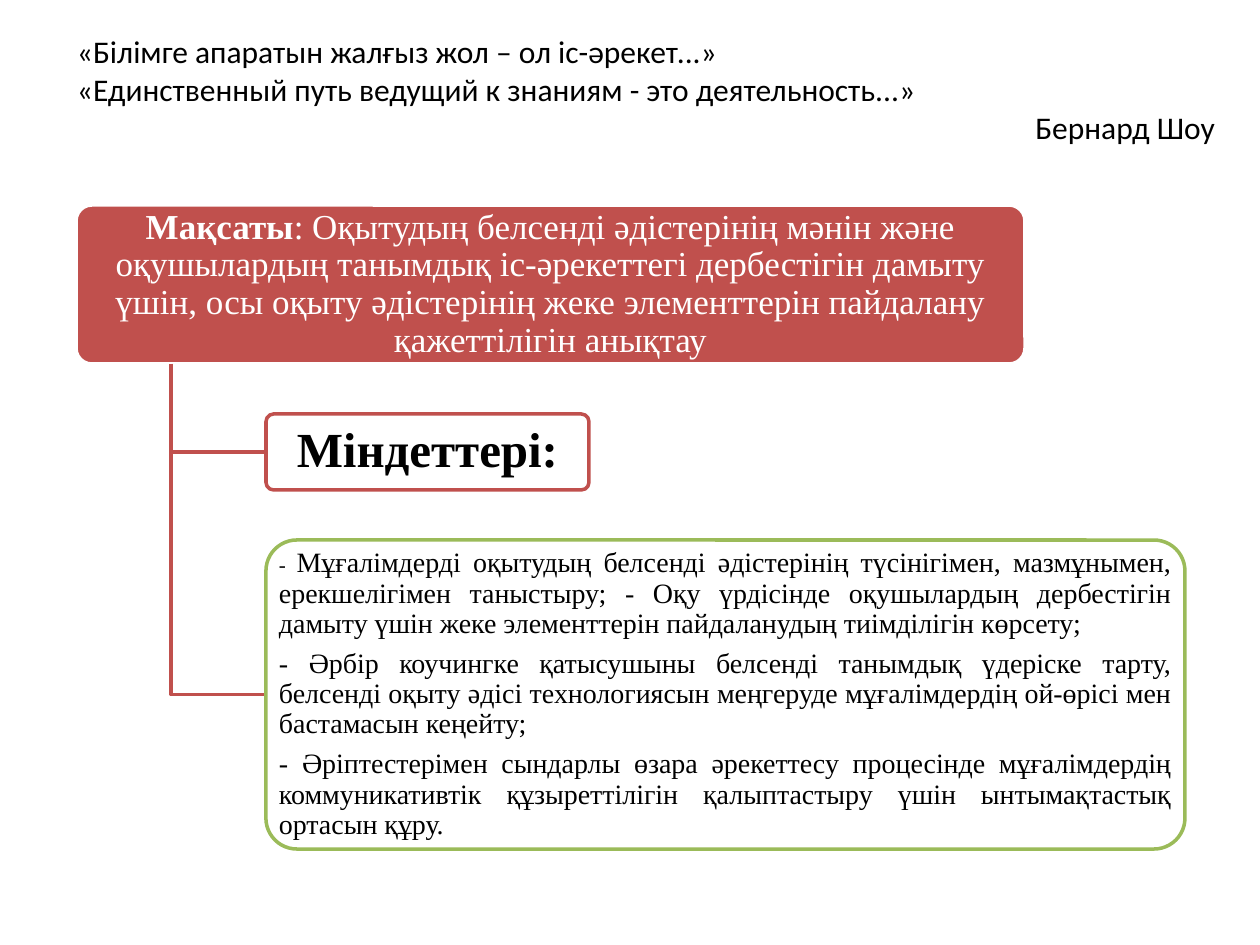
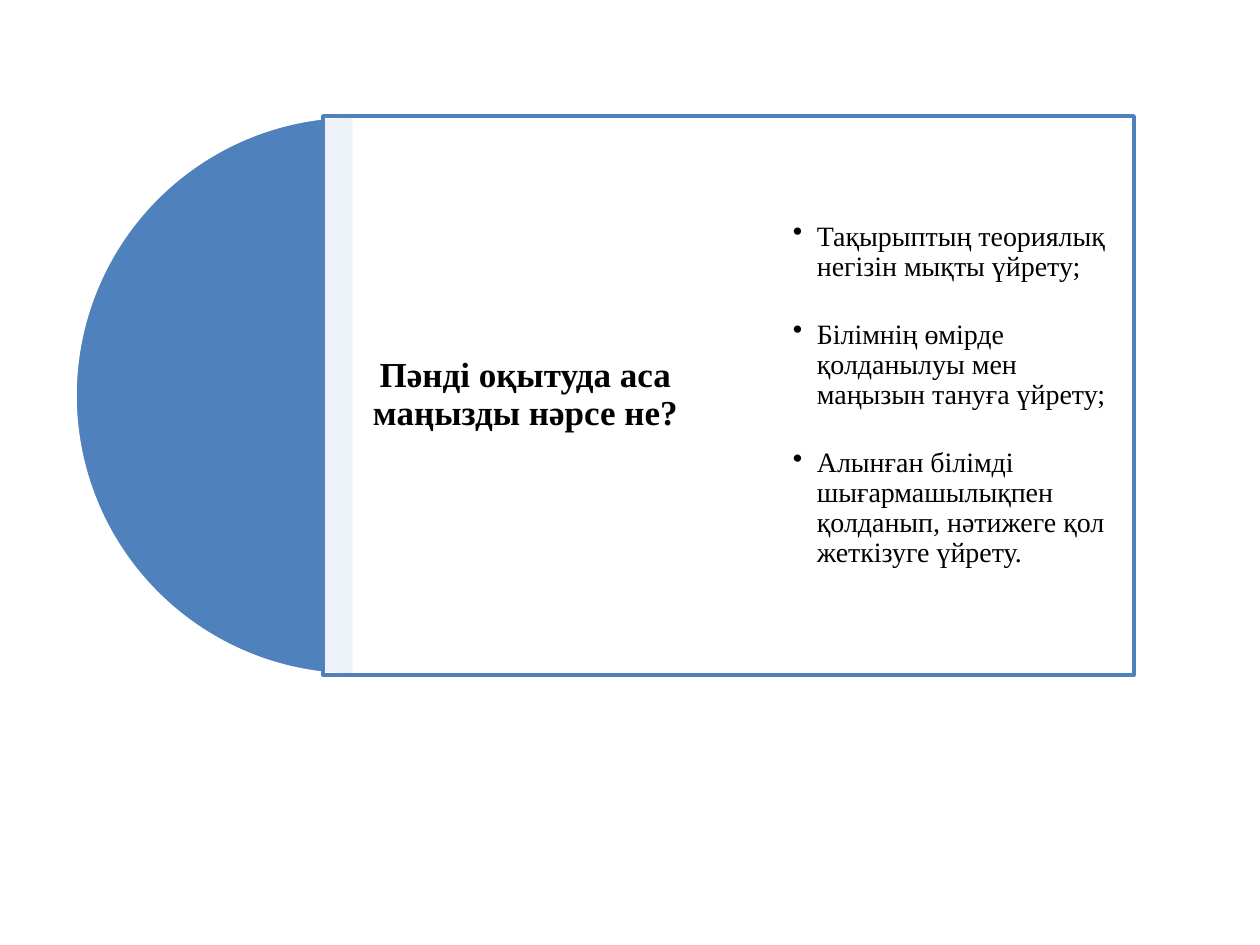
from dataclasses import dataclass

import lxml.etree
import pptx
import pptx.dml.color
import pptx.enum.shapes
import pptx.enum.text
import pptx.oxml.ns
import pptx.util

EMU_PER_PX = 914400 / 126
SHAPE = pptx.enum.shapes.MSO_SHAPE
ALIGN = pptx.enum.text.PP_ALIGN
ANCHOR = pptx.enum.text.MSO_ANCHOR
qn = pptx.oxml.ns.qn


@dataclass(frozen=True)
class Theme:
    red: str = "C0504D"
    green: str = "9BBB59"
    blue: str = "4F81BD"
    white: str = "FFFFFF"
    black: str = "000000"
    serif: str = "Times New Roman"
    sans: str = "Calibri"
    heading: int = 28
    lead: int = 20
    quote: int = 18
    body: int = 16
    dash: int = 12
    line: int = 2
    spacing: float = 0.9
    panel_opacity: int = 90


T = Theme()


def px(n):
    return pptx.util.Emu(round(n * EMU_PER_PX))


def rgb(color):
    return pptx.dml.color.RGBColor.from_string(color)


# Shared shape and text helpers
def paint(sp, fill, line, opacity=100):
    sp.shadow.inherit = False
    if fill:
        sp.fill.solid()
        sp.fill.fore_color.rgb = rgb(fill)
        if opacity < 100:
            clr = sp.fill._xPr.find(qn("a:solidFill"))[0]
            lxml.etree.SubElement(clr, qn("a:alpha"), val=str(opacity * 1000))
    else:
        sp.fill.background()
    sp.line.color.rgb = rgb(line)
    sp.line.width = pptx.util.Pt(T.line)


def add_shape(s, kind, box, fill, line, opacity=100, adj=()):
    sp = s.shapes.add_shape(kind, *map(px, box))
    paint(sp, fill, line, opacity)
    for i, value in enumerate(adj):
        sp.adjustments[i] = value
    return sp


def add_textbox(s, box):
    return s.shapes.add_textbox(*map(px, box))


def setup_frame(sp, insets, anchor=ANCHOR.MIDDLE):
    tf = sp.text_frame
    tf.word_wrap = True
    tf.vertical_anchor = anchor
    tf.margin_left = tf.margin_right = px(insets[0])
    tf.margin_top = tf.margin_bottom = px(insets[1])
    return tf


def add_paragraph(tf, runs, align, gap=0.0, spacing=T.spacing, font=T.serif, color=T.black):
    """Each run is (text, size, bold); gap is the space in points above later paragraphs."""
    first = not tf.paragraphs[0].runs
    p = tf.paragraphs[0] if first else tf.add_paragraph()
    p.alignment = align
    p.line_spacing = spacing
    p.space_before = pptx.util.Pt(0 if first else gap)
    for text, size, bold in runs:
        r = p.add_run()
        r.text = text
        r.font.name = font
        r.font.size = pptx.util.Pt(size)
        r.font.bold = bold
        r.font.color.rgb = rgb(color)
    return p


def add_bullet(p, indent):
    pPr = p._p.get_or_add_pPr()
    pPr.set("marL", str(px(indent)))
    pPr.set("indent", str(-px(indent)))
    lxml.etree.SubElement(pPr, qn("a:buChar"), char="•")


# Slide 1: quotation and goal tree
def add_quote(s, box, lines, author):
    tf = setup_frame(add_textbox(s, box), (13, 6), ANCHOR.TOP)
    for text, align in [(t, ALIGN.LEFT) for t in lines] + [(author, ALIGN.RIGHT)]:
        add_paragraph(tf, [(text, T.quote, False)], align, spacing=1.0, font=T.sans)


def add_branch(s, x, y, bend_x, bend_y):
    fb = s.shapes.build_freeform(px(x), px(y))
    fb.add_line_segments([(px(x), px(bend_y)), (px(bend_x), px(bend_y))], close=False)
    paint(fb.convert_to_shape(), None, T.red)


def add_node(s, box, paragraphs, align, insets, fill, line, color=T.black, opacity=100):
    sp = add_shape(s, SHAPE.ROUNDED_RECTANGLE, box, fill, line, opacity, adj=[0.1])
    tf = setup_frame(sp, insets)
    for runs in paragraphs:
        add_paragraph(tf, runs, align, gap=0.35 * T.body, color=color)


def add_goal_tree(s, box, goal, children):
    x, y, w, h = box
    add_node(s, box, [goal], ALIGN.CENTER, (5, 4), T.red, T.white, color=T.white)
    gap, trunk_x, child_x = 50, x + 95, x + 190
    child_y = y + h + gap
    for child_w, child_h, paragraphs, align, insets, line in children:
        add_branch(s, trunk_x, y + h, child_x, child_y + child_h / 2)
        add_node(s, (child_x, child_y, child_w, child_h), paragraphs, align, insets,
                 T.white, line, opacity=T.panel_opacity)
        child_y += child_h + gap


def goal_slide(s):
    add_quote(s, (64, 26, 1171, 127),
              ["«Білімге апаратын жалғыз жол – ол іс-әрекет...»",
               "«Единственный путь ведущий к знаниям - это деятельность...»"],
              "Бернард Шоу ")
    goal = [("Мақсаты", T.lead, True),
            (": Оқытудың белсенді әдістерінің мәнін және оқушылардың танымдық "
             "іс-әрекеттегі дербестігін дамыту үшін, осы оқыту әдістерінің жеке "
             "элементтерін пайдалану қажеттілігін анықтау", T.lead, False)]
    tasks = [
        [("- ", T.dash, False),
         ("Мұғалімдерді оқытудың белсенді әдістерінің түсінігімен, мазмұнымен, "
          "ерекшелігімен таныстыру; - Оқу үрдісінде оқушылардың дербестігін дамыту "
          "үшін жеке элементтерін пайдаланудың тиімділігін көрсету;", T.body, False)],
        [("- Әрбір коучингке қатысушыны белсенді танымдық үдеріске тарту, белсенді "
          "оқыту әдісі технологиясын меңгеруде мұғалімдердің ой-өрісі мен бастамасын "
          "кеңейту;", T.body, False)],
        [("- Әріптестерімен сындарлы өзара әрекеттесу процесінде мұғалімдердің "
          "коммуникативтік құзыреттілігін қалыптастыру үшін ынтымақтастық ортасын "
          "құру. ", T.body, False)],
    ]
    add_goal_tree(s, (76, 205, 949, 159), goal, [
        (323, 76, [[("Міндеттері:", T.heading, True)]], ALIGN.CENTER, (8, 5), T.red),
        (919, 309, tasks, ALIGN.JUSTIFY, (4, 3), T.green),
    ])


# Slide 2: half disc with question and answers
def add_question_panel(s, box, question, answers):
    x, y, w, h = box
    panel_x, panel_w = x + 248, w - 248
    column = panel_w // 2
    add_shape(s, SHAPE.PIE, (x, y, h, h), T.blue, T.white, adj=[54, 162])
    add_shape(s, SHAPE.RECTANGLE, (panel_x, y, panel_w, h), T.white, T.blue, T.panel_opacity)

    tf = setup_frame(add_textbox(s, (panel_x, y, column, h)), (10, 10))
    add_paragraph(tf, [(question, T.lead, True)], ALIGN.CENTER)

    answers_x = panel_x + column + 31
    tf = setup_frame(add_textbox(s, (answers_x, y, column, h)), (34, 34))
    for answer in answers:
        p = add_paragraph(tf, [(answer, T.body, False)], ALIGN.LEFT, gap=21.5)
        add_bullet(p, 24)


def question_slide(s):
    add_question_panel(s, (75, 116, 1059, 559), "Пәнді оқытуда аса маңызды нәрсе не?", [
        "Тақырыптың теориялық негізін мықты үйрету;",
        "Білімнің өмірде қолданылуы мен маңызын тануға үйрету;",
        "Алынған білімді шығармашылықпен қолданып, нәтижеге қол жеткізуге үйрету.",
    ])


def main():
    prs = pptx.Presentation()
    prs.slide_width, prs.slide_height = px(1260), px(945)
    for build in (goal_slide, question_slide):
        build(prs.slides.add_slide(prs.slide_layouts[6]))
    prs.save("out.pptx")


if __name__ == "__main__":
    main()
